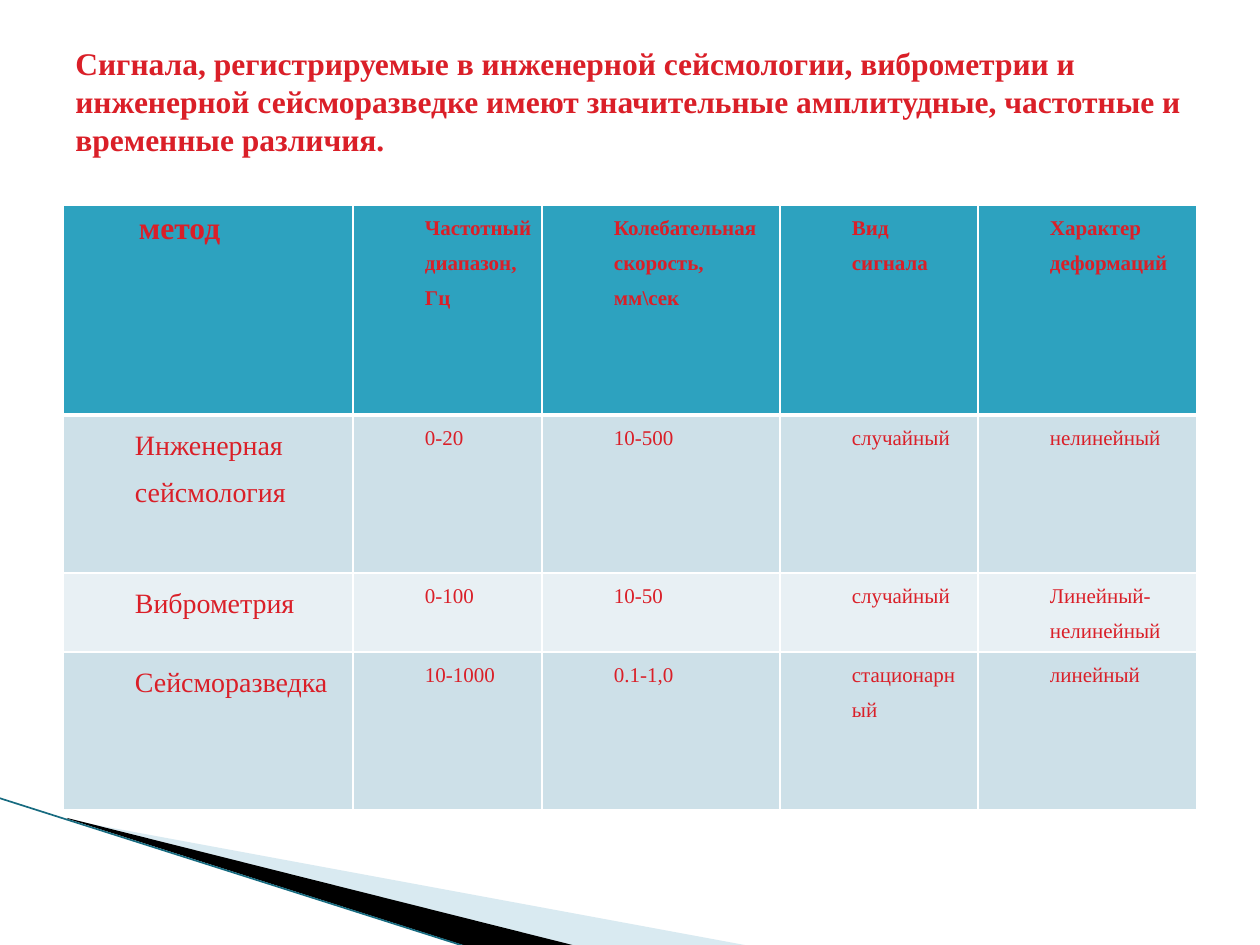
from lxml.etree import SubElement
from pptx import Presentation
from pptx.dml.color import RGBColor
from pptx.enum.shapes import MSO_CONNECTOR
from pptx.enum.text import MSO_ANCHOR
from pptx.oxml import parse_xml
from pptx.oxml.ns import nsdecls, qn
from pptx.util import Emu, Pt

SCALE = 914400 / 126
RED = RGBColor(0xDA, 0x1F, 0x28)
TEAL = RGBColor(0x2D, 0xA2, 0xBF)
DARK_TEAL = RGBColor(0x17, 0x6B, 0x80)
LIGHT_BLUE = RGBColor(0xA0, 0xCB, 0xDC)
BAND_DARK = RGBColor(0xCD, 0xE0, 0xE8)
BAND_LIGHT = RGBColor(0xE8, 0xF0, 0xF4)
BLACK = RGBColor(0, 0, 0)
WHITE = RGBColor(0xFF, 0xFF, 0xFF)

TITLE = ("Сигнала, регистрируемые в инженерной сейсмологии, виброметрии и "
         "инженерной сейсморазведке имеют значительные амплитудные, "
         "частотные и временные различия.")
COLS = [290, 189, 238, 198, 219]
ROWS = [210, 158, 79, 158]
FILLS = [TEAL, BAND_DARK, BAND_LIGHT, BAND_DARK]
DATA = [
    ["метод", "Частотный диапазон, Гц", "Колебательная скорость, мм\\сек",
     "Вид сигнала", "Характер деформаций"],
    ["Инженерная сейсмология", "0-20", "10-500", "случайный", "нелинейный"],
    ["Виброметрия", "0-100", "10-50", "случайный", "Линейный-нелинейный"],
    ["Сейсморазведка", "10-1000", "0.1-1,0", "стационарный", "линейный"],
]


def px(n):
    return Emu(round(n * SCALE))


def set_attrs(obj, values):
    for name, value in values.items():
        setattr(obj, name, value)


def write(p, text, size, bold):
    r = p.add_run()
    r.text = text
    set_attrs(r.font, {"name": "Times New Roman", "size": Pt(size), "bold": bold})
    r.font.color.rgb = RED


def add_wedge(s, points, color, alpha=None):
    builder = s.shapes.build_freeform(*points[0], scale=SCALE)
    builder.add_line_segments(points[1:], close=True)
    sp = builder.convert_to_shape()
    sp.shadow.inherit = False
    sp.fill.solid()
    sp.fill.fore_color.rgb = color
    sp.line.fill.background()
    if alpha:
        clr = sp.fill._xPr.find(qn("a:solidFill"))[0]
        SubElement(clr, qn("a:alpha")).set("val", str(alpha * 1000))


def add_line(s, start, end, color, width):
    cxn = s.shapes.add_connector(MSO_CONNECTOR.STRAIGHT, *map(px, start + end))
    cxn.line.color.rgb = color
    cxn.line.width = Pt(width)
    SubElement(cxn._element.spPr, qn("a:effectLst"))


def add_title(s, text):
    tf = s.shapes.add_textbox(px(63), px(38), px(1134), px(157)).text_frame
    set_attrs(tf, {"word_wrap": True, "vertical_anchor": MSO_ANCHOR.MIDDLE,
                   "margin_bottom": px(37)})
    write(tf.paragraphs[0], text, 18, True)


def set_borders(cell, widths):
    tcPr = cell._tc.get_or_add_tcPr()
    for i, (side, width) in enumerate(widths.items()):
        tcPr.insert(i, parse_xml(
            f'<a:ln{side} {nsdecls("a")} w="{Pt(width)}"><a:solidFill>'
            f'<a:srgbClr val="{WHITE}"/></a:solidFill></a:ln{side}>'))


def fill_cell(cell, row, col, text):
    corner = row == col == 0
    cell.fill.solid()
    cell.fill.fore_color.rgb = FILLS[row]
    set_borders(cell, {"L": 1, "R": 1, "T": 3 if row == 1 else 1,
                       "B": 3 if row == 0 else 1})
    side, edge = (px(13), px(6)) if corner else (px(9), 0)
    set_attrs(cell, {"margin_left": side, "margin_right": side,
                     "margin_top": edge, "margin_bottom": edge})
    p = cell.text_frame.paragraphs[0]
    pPr = p._p.get_or_add_pPr()
    pPr.set("marL", str(px(63)))
    pPr.set("indent", "0")
    p.line_spacing = 1.0 if corner else 1.5
    size = 18 if corner else 16 if col == 0 else 12
    write(p, text, size, row == 0)


def add_signal_table(s):
    table = s.shapes.add_table(len(ROWS), len(COLS), px(63), px(205),
                               px(sum(COLS)), px(sum(ROWS))).table
    table.horz_banding = False
    for column, width in zip(table.columns, COLS):
        column.width = px(width)
    for i, (row, height) in enumerate(zip(table.rows, ROWS)):
        row.height = px(height)
        for j, cell in enumerate(row.cells):
            fill_cell(cell, i, j, DATA[i][j])


def main():
    prs = Presentation()
    prs.slide_width, prs.slide_height = px(1260), px(945)
    s = prs.slides.add_slide(prs.slide_layouts[6])
    add_wedge(s, [(69, 820), (750, 946), (575, 946), (69, 819)], LIGHT_BLUE, 40)
    add_wedge(s, [(67, 818), (576, 946), (469, 947), (68, 819)], BLACK)
    add_line(s, (-1, 798), (467, 947), DARK_TEAL, 0.95)
    add_signal_table(s)
    add_title(s, TITLE)
    prs.save("out.pptx")


if __name__ == "__main__":
    main()
